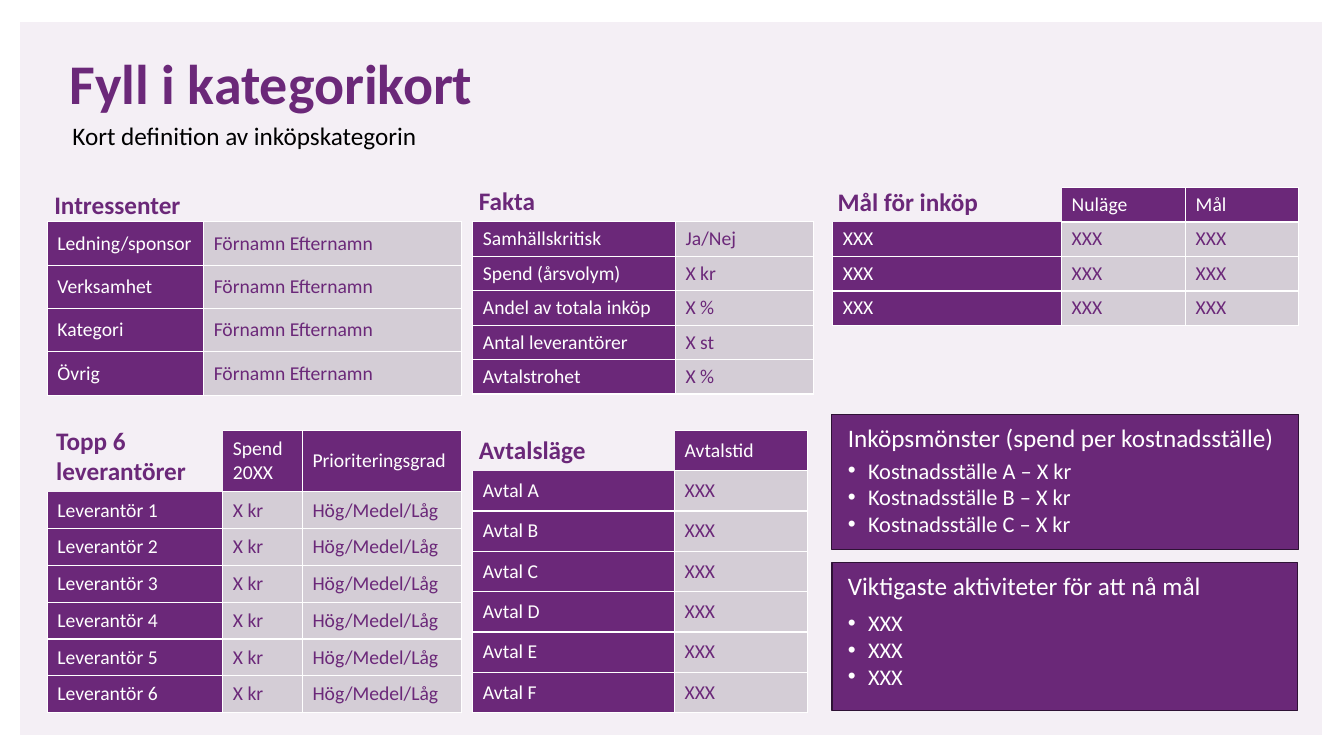
from dataclasses import dataclass

from lxml import etree
from pptx import Presentation
from pptx.dml.color import RGBColor
from pptx.enum.shapes import MSO_SHAPE
from pptx.enum.text import MSO_ANCHOR, PP_ALIGN
from pptx.oxml.ns import qn
from pptx.util import Inches, Pt

RECTANGLE = MSO_SHAPE.RECTANGLE
TOP, MIDDLE = MSO_ANCHOR.TOP, MSO_ANCHOR.MIDDLE
LEFT = PP_ALIGN.LEFT


@dataclass(frozen=True)
class Theme:
    font: str = "Calibri"
    purple: str = "6B2879"
    panel: str = "6A2878"
    outline: str = "2E1235"
    grey: str = "D4CDD6"
    white: str = "FFFFFF"
    black: str = "000000"
    title: int = 40
    heading: int = 18
    bullet: int = 16
    cell: int = 14
    backdrop_opacity: int = 7


@dataclass(frozen=True)
class Box:
    left: float
    top: float
    width: float
    height: float

    def lengths(self):
        return [Inches(value) for value in (self.left, self.top, self.width, self.height)]


THEME = Theme()


@dataclass(frozen=True)
class Label:
    text: str
    box: Box
    size: int = THEME.heading
    color: str = THEME.purple
    bold: bool = True


@dataclass(frozen=True)
class Grid:
    left: float
    top: float
    columns: list[float]
    row_heights: list[float]
    rows: list[list[str]]


@dataclass(frozen=True)
class Panel:
    heading: str
    bullets: list[str]
    box: Box
    gap: int


LABELS = [
    Label("Fyll i kategorikort", Box(0.59, 0.43, 8.32, 0.77), THEME.title),
    Label("Kort definition av inköpskategorin", Box(0.62, 1.14, 5, 0.4), color=THEME.black, bold=False),
    Label("Intressenter", Box(0.44, 1.83, 3.67, 0.4)),
    Label("Fakta", Box(4.65, 1.79, 3.75, 0.4)),
    Label("Mål för inköp", Box(8.21, 1.8, 1.94, 0.4)),
    Label("Topp 6\nleverantörer", Box(0.46, 4.17, 2.06, 0.71)),
    Label("Avtalsläge", Box(4.65, 4.26, 1.81, 0.4)),
]

GRIDS = [
    Grid(0.47, 2.2, [1.55, 2.56], [0.43] * 4,
         [[role, "Förnamn Efternamn"] for role in ("Ledning/sponsor", "Verksamhet", "Kategori", "Övrig")]),
    Grid(4.69, 2.2, [2.01, 1.37], [1.71 / 5] * 5,
         [["Samhällskritisk", "Ja/Nej"], ["Spend (årsvolym)", "X kr"], ["Andel av totala inköp", "X %"],
          ["Antal leverantörer", "X st"], ["Avtalstrohet", "X %"]]),
    Grid(8.26, 1.86, [2.27, 1.23, 1.12], [1.37 / 4] * 4,
         [["", "Nuläge", "Mål"]] + [["XXX"] * 3] * 3),
    Grid(0.47, 4.27, [1.74, 0.79, 1.58], [0.61] + [2.19 / 6] * 6,
         [["", "Spend\n20XX", "Prioriteringsgrad"]]
         + [[f"Leverantör {number}", "X kr", "Hög/Medel/Låg"] for number in range(1, 7)]),
    Grid(4.69, 4.27, [2, 1.32], [0.4] * 7,
         [["", "Avtalstid"]] + [[f"Avtal {letter}", "XXX"] for letter in "ABCDEF"]),
]

PANELS = [
    Panel("Inköpsmönster (spend per kostnadsställe)",
          [f"Kostnadsställe {letter} – X kr" for letter in "ABC"], Box(8.25, 4.11, 4.63, 1.34), 3),
    Panel("Viktigaste aktiviteter för att nå mål", ["XXX"] * 3, Box(8.25, 5.58, 4.62, 1.47), 6),
]


def add_run(paragraph, text: str, size: int, color: str, bold: bool = False) -> None:
    run = paragraph.add_run()
    run.text = text
    run.font.name = THEME.font
    run.font.size = Pt(size)
    run.font.bold = bold
    run.font.color.rgb = RGBColor.from_string(color)


def add_rectangle(slide, box: Box, color: str):
    shape = slide.shapes.add_shape(RECTANGLE, *box.lengths())
    shape.shadow.inherit = False
    shape.fill.solid()
    shape.fill.fore_color.rgb = RGBColor.from_string(color)
    return shape


def add_backdrop(slide) -> None:
    shape = add_rectangle(slide, Box(0.2, 0.22, 12.91, 7.07), THEME.panel)
    shape.line.fill.background()
    color = shape.fill._xPr.find(f".//{qn('a:srgbClr')}")
    etree.SubElement(color, qn("a:alpha"), val=str(THEME.backdrop_opacity * 1000))


def add_label(slide, label: Label) -> None:
    frame = slide.shapes.add_textbox(*label.box.lengths()).text_frame
    frame.word_wrap = True
    paragraph = frame.paragraphs[0]
    for index, line in enumerate(label.text.split("\n")):
        if index:
            paragraph.add_line_break()
        add_run(paragraph, line, label.size, label.color, label.bold)


def set_borders(cell, hidden: str) -> None:
    properties = cell._tc.get_or_add_tcPr()
    for index, side in enumerate("LRTB"):
        line = etree.Element(qn(f"a:ln{side}"), w=str(Pt(1)))
        if side in hidden:
            etree.SubElement(line, qn("a:noFill"))
        else:
            fill = etree.SubElement(line, qn("a:solidFill"))
            etree.SubElement(fill, qn("a:srgbClr"), val=THEME.white)
        properties.insert(index, line)


def fill_cell(cell, text: str, dark: bool, hidden: str) -> None:
    cell.vertical_anchor = MIDDLE
    if text:
        cell.fill.solid()
        cell.fill.fore_color.rgb = RGBColor.from_string(THEME.purple if dark else THEME.grey)
        for index, line in enumerate(text.split("\n")):
            paragraph = cell.text_frame.add_paragraph() if index else cell.text_frame.paragraphs[0]
            add_run(paragraph, line, THEME.cell, THEME.white if dark else THEME.purple)
    else:
        cell.fill.background()
        cell.margin_top = cell.margin_bottom = 0
    set_borders(cell, hidden)


def add_grid(slide, grid: Grid) -> None:
    box = Box(grid.left, grid.top, sum(grid.columns), sum(grid.row_heights))
    table = slide.shapes.add_table(len(grid.rows), len(grid.columns), *box.lengths()).table
    table.first_row = table.horz_banding = False
    for column, width in zip(table.columns, grid.columns):
        column.width = Inches(width)
    for row, height in zip(table.rows, grid.row_heights):
        row.height = Inches(height)
    has_header = not grid.rows[0][0]
    hidden = {(0, 0): "LRTB", (0, 1): "L", (1, 0): "T"} if has_header else {}
    for row_index, row in enumerate(grid.rows):
        for column_index, text in enumerate(row):
            dark = column_index == 0 or (has_header and row_index == 0)
            fill_cell(table.cell(row_index, column_index), text, dark,
                      hidden.get((row_index, column_index), ""))


def add_panel(slide, panel: Panel) -> None:
    shape = add_rectangle(slide, panel.box, THEME.panel)
    shape.line.color.rgb = RGBColor.from_string(THEME.outline)
    shape.line.width = Pt(1)
    frame = shape.text_frame
    frame.word_wrap = True
    frame.vertical_anchor = TOP
    frame.margin_left = frame.margin_right = Inches(0.16)
    frame.margin_top, frame.margin_bottom = Inches(0.08), Inches(0.05)
    heading = frame.paragraphs[0]
    heading.alignment = LEFT
    add_run(heading, panel.heading, THEME.heading, THEME.white)
    for index, text in enumerate(panel.bullets):
        paragraph = frame.add_paragraph()
        paragraph.alignment = LEFT
        paragraph.space_before = Pt(0 if index else panel.gap)
        properties = paragraph._p.get_or_add_pPr()
        properties.set("marL", str(Inches(0.2)))
        properties.set("indent", str(Inches(-0.2)))
        etree.SubElement(properties, qn("a:buFont"), typeface="Arial")
        etree.SubElement(properties, qn("a:buChar"), char="•")
        add_run(paragraph, text, THEME.bullet, THEME.white)


def main() -> None:
    presentation = Presentation()
    presentation.slide_width, presentation.slide_height = Inches(13.33), Inches(7.5)
    slide = presentation.slides.add_slide(presentation.slide_layouts[6])
    add_backdrop(slide)
    for draw, items in ((add_grid, GRIDS), (add_label, LABELS), (add_panel, PANELS)):
        for item in items:
            draw(slide, item)
    presentation.save("out.pptx")


if __name__ == "__main__":
    main()
